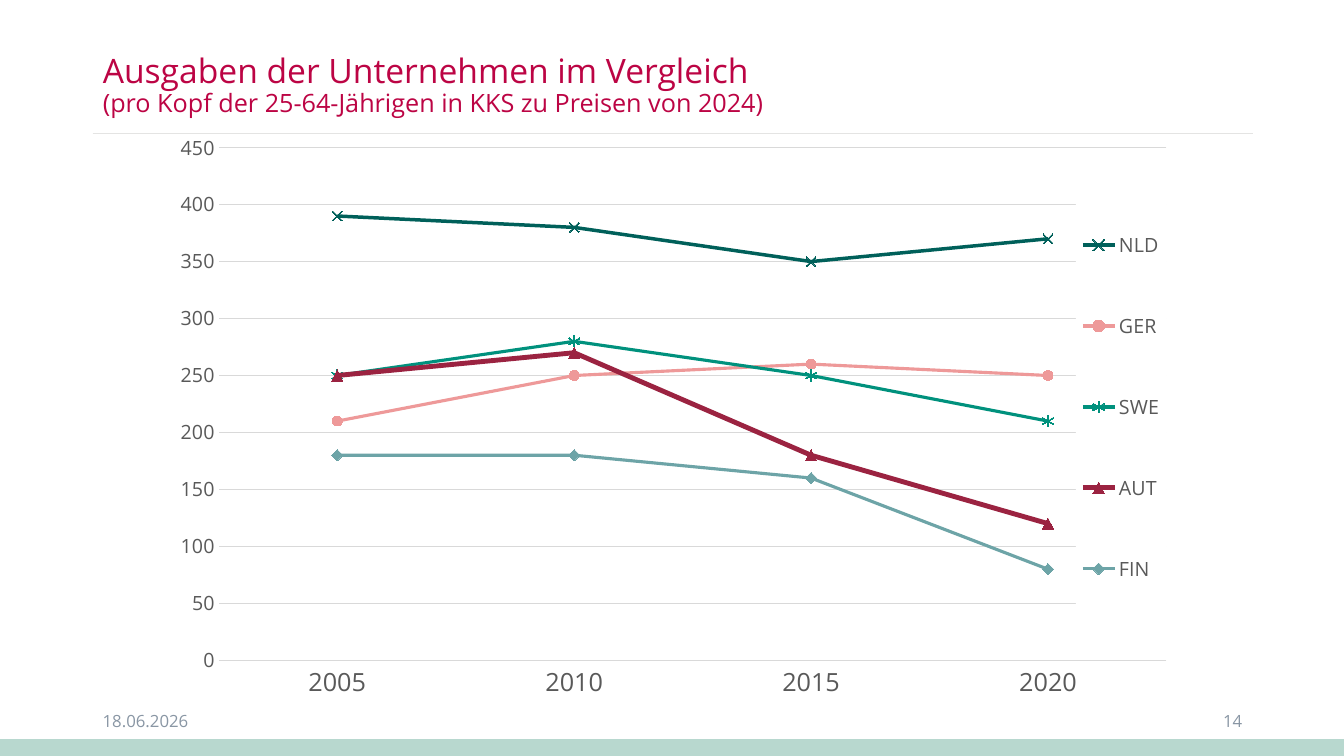
from pptx import Presentation
from pptx.chart.data import CategoryChartData
from pptx.dml.color import RGBColor
from pptx.enum.chart import XL_CHART_TYPE as ChartType
from pptx.enum.chart import XL_LEGEND_POSITION as LegendPosition
from pptx.enum.chart import XL_MARKER_STYLE as Marker
from pptx.enum.chart import XL_TICK_MARK as TickMark
from pptx.enum.shapes import MSO_CONNECTOR as Connector
from pptx.enum.shapes import MSO_SHAPE as Shape
from pptx.enum.text import MSO_ANCHOR as Anchor
from pptx.enum.text import MSO_AUTO_SIZE as AutoSize
from pptx.enum.text import PP_ALIGN as Align
from pptx.oxml import parse_xml
from pptx.oxml.ns import nsdecls, qn
from pptx.util import Inches, Pt

# Content
FONT = "Open Sans"
TITLE = [
    ("Ausgaben der Unternehmen im Vergleich ", 24),
    ("(pro Kopf der 25-64-Jährigen in KKS zu Preisen von 2024)", 18),
]
FOOTER = [("18.06.2026", 0.92, Align.LEFT), ("14", 9.42, Align.RIGHT)]
YEARS = ["2005", "2010", "2015", "2020"]
# Country, spending, colour, line width, marker, marker size
COUNTRIES = [
    ("NLD", (390, 380, 350, 370), "00605A", 2.5, Marker.X, 7),
    ("GER", (210, 250, 260, 250), "EE9999", 2.25, Marker.CIRCLE, 7),
    ("SWE", (250, 280, 250, 210), "00917D", 2.25, Marker.STAR, 8),
    ("AUT", (250, 270, 180, 120), "9B2341", 3.5, Marker.TRIANGLE, 8),
    ("FIN", (180, 180, 160, 80), "6DA4A7", 2.25, Marker.DIAMOND, 8),
]
# Left, top, width and height as shares of the chart
PLOT_AREA = (0.05, 0.02, 0.94, 0.85)
LEGEND_AREA = (0.9, 0.07, 0.09, 0.76)


def color(value):
    return RGBColor.from_string(value)


def style_font(font, size, tone):
    font.name, font.size, font.bold = FONT, Pt(size), False
    font.color.rgb = color(tone)


def style_line(line, tone, width):
    line.color.rgb = color(tone)
    line.width = Pt(width)


def add_text(page, text, left, top, width, height, size, tone, align):
    box = page.shapes.add_textbox(*map(Inches, (left, top, width, height)))
    frame = box.text_frame
    frame.word_wrap = True
    frame.vertical_anchor = Anchor.MIDDLE
    para = frame.paragraphs[0]
    para.alignment = align
    span = para.add_run()
    span.text = text
    style_font(span.font, size, tone)


def manual_layout(area, inner=False):
    target = '<c:layoutTarget val="inner"/>' if inner else ""
    modes = "".join(f'<c:{key}Mode val="edge"/>' for key in "xy")
    sizes = "".join(f'<c:{key} val="{part}"/>' for key, part in zip("xywh", area))
    return parse_xml(f'<c:layout {nsdecls("c")}><c:manualLayout>{target}{modes}'
                     f'{sizes}</c:manualLayout></c:layout>')


def remove_layout(parent):
    for old in parent.findall(qn("c:layout")):
        parent.remove(old)


deck = Presentation()
deck.slide_width, deck.slide_height = Inches(13.33), Inches(7.5)
page = deck.slides.add_slide(deck.slide_layouts[5])

# Rule under the title and band at the bottom
rule = page.shapes.add_connector(
    Connector.STRAIGHT, *map(Inches, (0.92, 1.32, 12.43, 1.32)))
style_line(rule.line, "E4E4E3", 0.5)
rule._element.spPr.append(parse_xml(f'<a:effectLst {nsdecls("a")}/>'))

band = page.shapes.add_shape(
    Shape.RECTANGLE, *map(Inches, (0, 7.34, 13.33, 0.16)))
band.shadow.inherit = False
band.fill.solid()
band.fill.fore_color.rgb = color("B8D8CF")
style_line(band.line, "B8D8CF", 1)

# Title
title = page.shapes.title
title.left, title.top, title.width, title.height = map(
    Inches, (0.92, 0.4, 11.5, 0.92))
frame = title.text_frame
frame.word_wrap = True
frame.auto_size = AutoSize.NONE
frame.vertical_anchor = Anchor.MIDDLE
para = frame.paragraphs[0]
para.alignment = Align.LEFT
para.line_spacing = 0.9
for index, (text, size) in enumerate(TITLE):
    if index:
        para.add_line_break()
    span = para.add_run()
    span.text = text
    style_font(span.font, size, "BC0444")

# Date and page number
for text, left, align in FOOTER:
    add_text(page, text, left, 6.95, 3, 0.4, size=12, tone="8996A4", align=align)

# Line chart
data = CategoryChartData()
data.categories = YEARS
for name, spending, *_ in COUNTRIES:
    data.add_series(name, spending)
chart = page.shapes.add_chart(
    ChartType.LINE_MARKERS, *map(Inches, (1.67, 1.33, 10, 6)), data).chart
chart.has_title = False
style_font(chart.font, 10, "000000")
chart.plots[0].vary_by_categories = False

for series, (_, _, tone, width, marker, size) in zip(chart.plots[0].series, COUNTRIES):
    series.smooth = False
    style_line(series.format.line, tone, width)
    series.marker.style, series.marker.size = marker, size
    series.marker.format.fill.solid()
    series.marker.format.fill.fore_color.rgb = color(tone)
    style_line(series.marker.format.line, tone, 0.75)

# Axes
years, amounts = chart.category_axis, chart.value_axis
for axis, size in ((years, 18), (amounts, 14)):
    axis.major_tick_mark = axis.minor_tick_mark = TickMark.NONE
    style_font(axis.tick_labels.font, size, "595959")
years.has_major_gridlines = False
style_line(years.format.line, "D9D9D9", 0.75)
amounts.minimum_scale, amounts.maximum_scale, amounts.major_unit = 0, 450, 50
amounts.format.line.fill.background()
amounts.has_major_gridlines = True
style_line(amounts.major_gridlines.format.line, "D9D9D9", 0.75)

# Legend on a white ground, over the right end of the plot
chart.has_legend = True
legend = chart.legend
legend.position = LegendPosition.RIGHT
legend.include_in_layout = True
style_font(legend.font, 14, "595959")
legend_xml = legend._element
remove_layout(legend_xml)
legend_xml.find(qn("c:legendPos")).addnext(manual_layout(LEGEND_AREA))
legend_xml.find(qn("c:overlay")).addnext(parse_xml(
    f'<c:spPr {nsdecls("c", "a")}><a:solidFill><a:srgbClr val="FFFFFF"/>'
    '</a:solidFill></c:spPr>'))

# Plot area
plot_xml = chart._chartSpace.chart.plotArea
remove_layout(plot_xml)
plot_xml.insert(0, manual_layout(PLOT_AREA, inner=True))

deck.save("out.pptx")
